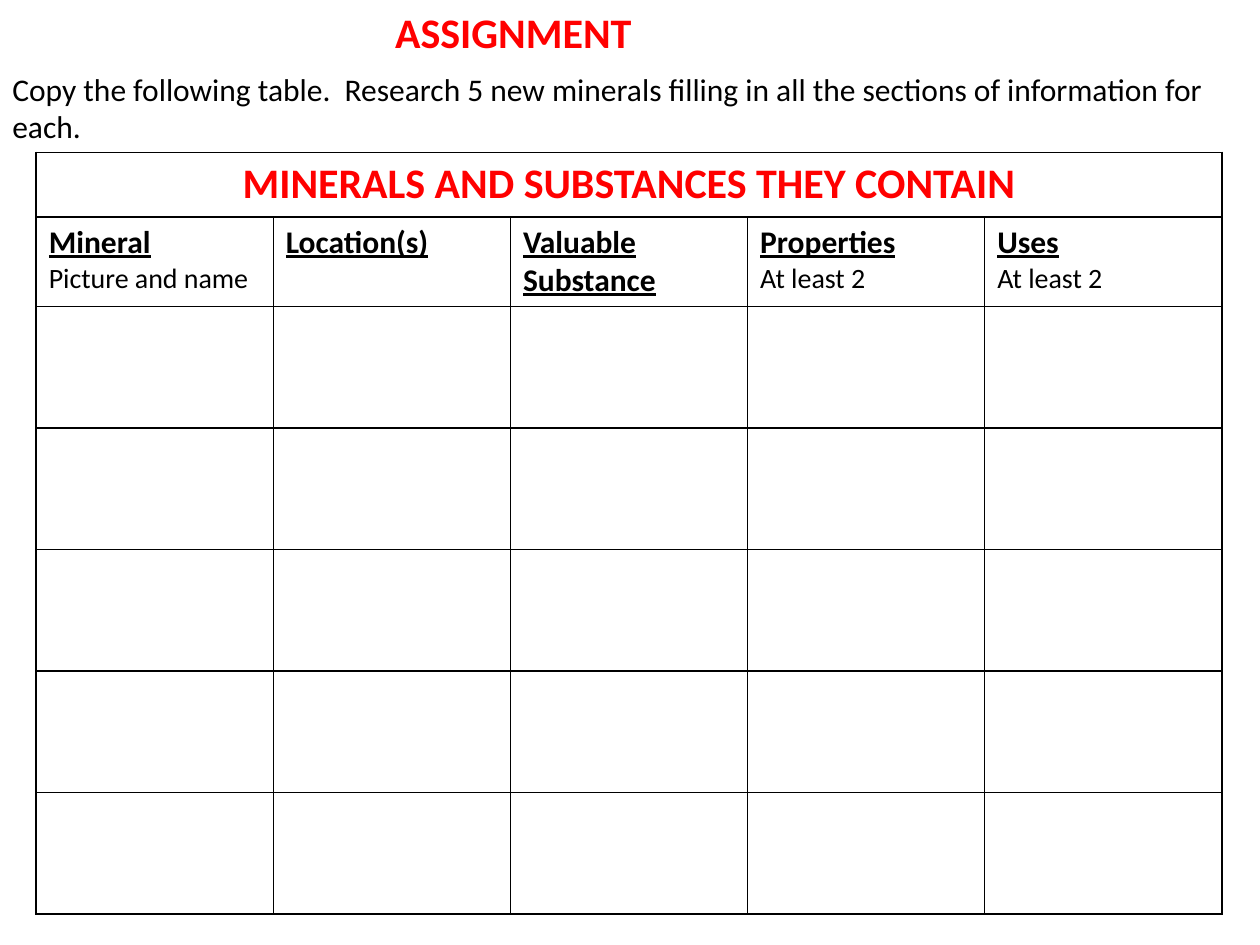
import pptx
import pptx.dml.color
import pptx.enum.text
import pptx.oxml
import pptx.oxml.ns
import pptx.util

Cm = pptx.util.Cm
RED = pptx.dml.color.RGBColor(0xFF, 0x00, 0x00)
BLACK = pptx.dml.color.RGBColor(0x00, 0x00, 0x00)
CENTER = pptx.enum.text.PP_ALIGN.CENTER

TITLE = {"size": pptx.util.Pt(24), "bold": True, "color": RED}
BODY = {"size": pptx.util.Pt(18), "color": BLACK}
HEADING = {**BODY, "bold": True, "underline": True}
NOTE = {"size": pptx.util.Pt(16), "bold": False, "color": BLACK}

# The tab after "Mineral" carries its underline on to the tab stop
COLUMNS = [
    ("Mineral\t", "Picture and name"),
    ("Location(s)",),
    ("Valuable Substance",),
    ("Properties", "At least 2"),
    ("Uses", "At least 2"),
]
MINERALS = 5
ROW_HEIGHTS = [Cm(1.3), Cm(1.8)] + [Cm(2.45)] * MINERALS
COLUMN_WIDTH = Cm(4.78)
UNDERLINE_END = Cm(2.9)


def write(p, text, style, align=None):
    p.alignment = align
    r = p.add_run()
    r.text = text
    r.font.name = "Calibri"
    for name, value in style.items():
        if name == "color":
            r.font.color.rgb = value
        else:
            setattr(r.font, name, value)


def add_text(s, box, text, style, align=None):
    tf = s.shapes.add_textbox(*box).text_frame
    tf.word_wrap = True
    tf.auto_size = pptx.enum.text.MSO_AUTO_SIZE.SHAPE_TO_FIT_TEXT
    write(tf.paragraphs[0], text, style, align)


def add_tab_stop(p, position):
    p_pr = p._p.get_or_add_pPr()
    tabs = pptx.oxml.parse_xml(
        f'<a:tabLst {pptx.oxml.ns.nsdecls("a")}>'
        f'<a:tab pos="{int(position)}" algn="l"/></a:tabLst>')
    p_pr.append(tabs)


def format_cell(cell):
    tc_pr = cell._tc.get_or_add_tcPr()
    for side in ("lnL", "lnR", "lnT", "lnB"):
        tc_pr.append(pptx.oxml.parse_xml(
            f'<a:{side} {pptx.oxml.ns.nsdecls("a")} w="12700"><a:solidFill>'
            f'<a:srgbClr val="{BLACK}"/></a:solidFill></a:{side}>'))
    cell.fill.background()


def add_minerals_table(s):
    rows, cols = len(ROW_HEIGHTS), len(COLUMNS)
    frame = s.shapes.add_table(rows, cols, Cm(0.73), Cm(3.07),
                               COLUMN_WIDTH * cols, sum(ROW_HEIGHTS))
    table = frame.table
    for column in table.columns:
        column.width = COLUMN_WIDTH
    for row, height in zip(table.rows, ROW_HEIGHTS):
        row.height = height
    for cell in table.iter_cells():
        format_cell(cell)

    # Title across all columns
    table.cell(0, 0).merge(table.cell(0, cols - 1))
    write(table.cell(0, 0).text_frame.paragraphs[0],
          "MINERALS AND SUBSTANCES THEY CONTAIN", TITLE, CENTER)

    # Column headings with their notes
    for i, (heading, *notes) in enumerate(COLUMNS):
        tf = table.cell(1, i).text_frame
        write(tf.paragraphs[0], heading, HEADING)
        if heading.endswith("\t"):
            add_tab_stop(tf.paragraphs[0], UNDERLINE_END)
        for note in notes:
            write(tf.add_paragraph(), note, NOTE)


def main():
    prs = pptx.Presentation()
    prs.slide_width, prs.slide_height = Cm(25.4), Cm(19.05)
    s = prs.slides.add_slide(prs.slide_layouts[6])

    add_minerals_table(s)

    # Title and instructions above the table
    add_text(s, (0, 0, Cm(20.7), Cm(1.28)), "ASSIGNMENT", TITLE, CENTER)
    add_text(s, (0, Cm(1.28), Cm(24.7), Cm(1.8)),
             "Copy the following table.  Research 5 new minerals filling in "
             "all the sections of information for each.", BODY)

    prs.save("out.pptx")


if __name__ == "__main__":
    main()
